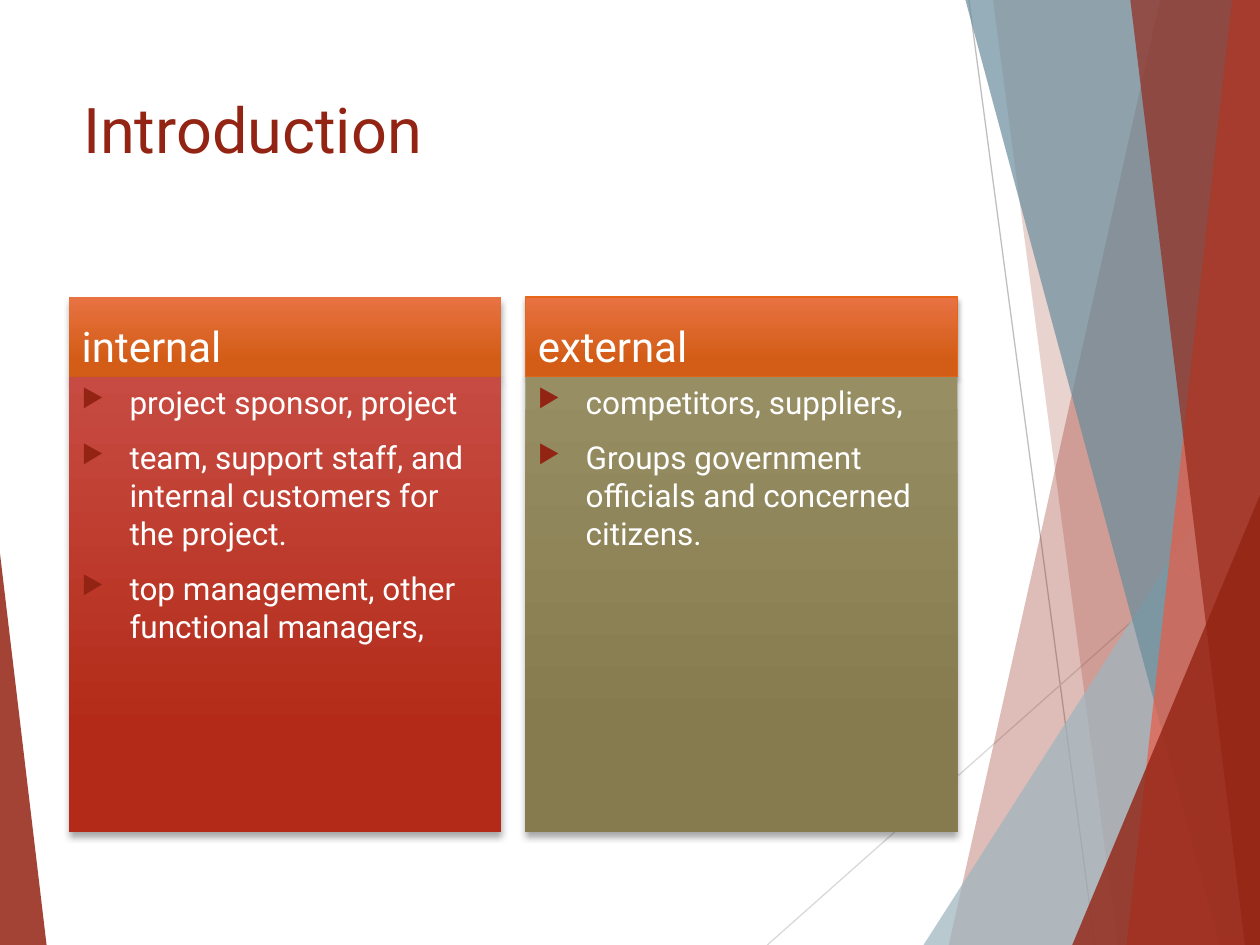
from dataclasses import dataclass

from lxml.etree import SubElement
from pptx import Presentation
from pptx.dml.color import RGBColor
from pptx.enum.shapes import MSO_CONNECTOR, MSO_SHAPE
from pptx.enum.text import MSO_ANCHOR, PP_ALIGN
from pptx.oxml.ns import qn
from pptx.util import Inches, Pt


@dataclass(frozen=True)
class Theme:
    font: str = "Roboto"
    title_size: int = 36
    heading_size: int = 24
    body_size: int = 18
    dark_red: str = "932313"
    coral: str = "E75C48"
    slate: str = "698D9C"
    pale_slate: str = "9EB5BF"
    line_gray: str = "BFBFBF"
    pale_gray: str = "D9D9D9"
    white: str = "FFFFFF"
    shadow: str = "000000"
    heading_outline: str = "E76618"
    heading_gradient: tuple = ("E87242", "D35D16")
    red_gradient: tuple = ("C74B42", "B32B18")
    olive_gradient: tuple = ("988E64", "857B4E")


THEME = Theme()
HEADING_HEIGHT = 0.63


def color(value):
    return RGBColor.from_string(value)


def add_run(paragraph, text, size, text_color):
    run = paragraph.add_run()
    run.text = text
    run.font.name = THEME.font
    run.font.size = Pt(size)
    run.font.color.rgb = color(text_color)


def fill_translucent(shape, fill_color, opacity):
    shape.shadow.inherit = False
    shape.fill.solid()
    shape.fill.fore_color.rgb = color(fill_color)
    shape.line.fill.background()
    color_element = next(shape.fill._xPr.iter(qn("a:srgbClr")))
    SubElement(color_element, qn("a:alpha"), val=str(opacity * 1000))


def add_thin_line(slide, start, end, line_color):
    line = slide.shapes.add_connector(
        MSO_CONNECTOR.STRAIGHT, *(Inches(value) for value in (*start, *end)))
    line.line.color.rgb = color(line_color)
    line.line.width = Pt(0.75)
    SubElement(line._element.spPr, qn("a:effectLst"))


def add_band(slide, box, top_left, bottom_left, fill_color, opacity):
    """Add a band whose left edge slants and whose right edge is the box's."""
    left, top, width, height = box
    right, bottom = left + width, top + height
    corners = [(Inches(x), Inches(y)) for x, y in (
        (top_left, top), (right, top), (right, bottom), (bottom_left, bottom))]
    builder = slide.shapes.build_freeform(*corners[0])
    builder.add_line_segments(corners[1:], close=True)
    fill_translucent(builder.convert_to_shape(), fill_color, opacity)


def add_corner(slide, box, apex, fill_color, opacity):
    triangle = slide.shapes.add_shape(
        MSO_SHAPE.ISOSCELES_TRIANGLE, *(Inches(value) for value in box))
    triangle.adjustments[0] = apex
    fill_translucent(triangle, fill_color, opacity)


def add_decoration(slide, box):
    left, top, width, height = box
    right, bottom = left + width, top + height
    band_box = (left, top - 0.01, width, height + 0.01)

    def right_corner(corner_width, corner_height, fill_color, opacity):
        corner_box = (right - corner_width, bottom - corner_height,
                      corner_width, corner_height)
        add_corner(slide, corner_box, 1, fill_color, opacity)

    add_thin_line(slide, (7.69, top), (8.69, bottom), THEME.line_gray)
    add_thin_line(slide, (right, 4.03), (6.09, bottom), THEME.pale_gray)
    add_band(slide, band_box, 9.21, 7.53, THEME.dark_red, 30)
    add_band(slide, band_box, 7.88, 8.87, THEME.dark_red, 20)
    right_corner(2.67, 4.17, THEME.pale_slate, 72)
    add_band(slide, band_box, 7.66, 9.68, THEME.slate, 70)
    add_band(slide, band_box, 9.78, 8.94, THEME.coral, 70)
    add_band(slide, band_box, 8.97, 9.88, THEME.dark_red, 65)
    right_corner(1.49, 3.57, THEME.dark_red, 80)
    add_corner(slide, (left, bottom - 3.11, 0.37, 3.11), 0, THEME.dark_red, 85)


def place_title(slide, box, text):
    title = slide.shapes.title
    title.left, title.top, title.width, title.height = (
        Inches(value) for value in box)
    title.text_frame.vertical_anchor = MSO_ANCHOR.TOP
    paragraph = title.text_frame.paragraphs[0]
    paragraph.alignment = PP_ALIGN.LEFT
    add_run(paragraph, text, THEME.title_size, THEME.dark_red)


def add_shadow(shape, blur, distance):
    shape.shadow.inherit = False
    effects = shape._element.spPr.find(qn("a:effectLst"))
    shadow = SubElement(
        effects, qn("a:outerShdw"), blurRad=str(Pt(blur)),
        dist=str(Pt(distance)), dir="5400000", rotWithShape="0")
    shadow_color = SubElement(shadow, qn("a:srgbClr"), val=THEME.shadow)
    SubElement(shadow_color, qn("a:alpha"), val="35000")


def add_bullet(paragraph):
    properties = paragraph._p.get_or_add_pPr()
    properties.set("marL", str(Inches(0.38)))
    properties.set("indent", str(Inches(-0.38)))
    bullet_color = SubElement(properties, qn("a:buClr"))
    SubElement(bullet_color, qn("a:srgbClr"), val=THEME.dark_red)
    SubElement(properties, qn("a:buSzPct"), val="80000")
    SubElement(properties, qn("a:buChar"), char="▶")


def add_panel(slide, box, gradient, texts, size, anchor, bulleted=False,
              outline=None):
    panel = slide.shapes.add_shape(
        MSO_SHAPE.RECTANGLE, *(Inches(value) for value in box))
    panel.fill.gradient()
    panel.fill.gradient_angle = 270
    for stop, position, stop_color in zip(
            panel.fill.gradient_stops, (0, 0.78), gradient):
        stop.position = position
        stop.color.rgb = color(stop_color)
    if outline:
        panel.line.color.rgb = color(outline)
        panel.line.width = Pt(1)
        add_shadow(panel, 3, 2)
    else:
        panel.line.fill.background()
        add_shadow(panel, 4, 3)

    frame = panel.text_frame
    frame.word_wrap = True
    frame.vertical_anchor = anchor
    for index, text in enumerate(texts):
        paragraph = frame.add_paragraph() if index else frame.paragraphs[0]
        paragraph.alignment = PP_ALIGN.LEFT
        paragraph.space_before = Pt(10)
        if bulleted:
            add_bullet(paragraph)
        add_run(paragraph, text, size, THEME.white)


def add_column(slide, box, heading, items, gradient, outline=None):
    left, top, width, height = box
    add_panel(slide, (left, top, width, HEADING_HEIGHT),
              THEME.heading_gradient, [heading], THEME.heading_size,
              MSO_ANCHOR.BOTTOM, outline=outline)
    add_panel(slide, (left, top + HEADING_HEIGHT, width, height - HEADING_HEIGHT),
              gradient, items, THEME.body_size, MSO_ANCHOR.TOP, bulleted=True)


def main():
    presentation = Presentation()
    presentation.slide_width = Inches(10)
    presentation.slide_height = Inches(7.5)
    slide = presentation.slides.add_slide(presentation.slide_layouts[5])
    add_decoration(slide, (0, 0, 10, 7.5))
    place_title(slide, (0.56, 0.67, 7.05, 1.44), "Introduction")
    columns = (
        ("internal",
         ["project sponsor, project",
          "team, support staff, and internal customers for the project.",
          "top management, other functional managers,"],
         THEME.red_gradient, None),
        ("external",
         ["competitors, suppliers,",
          "Groups government officials and concerned citizens."],
         THEME.olive_gradient, THEME.heading_outline),
    )
    for index, column in enumerate(columns):
        add_column(slide, (0.55 + index * 3.62, 2.36, 3.43, 4.24), *column)
    presentation.save("out.pptx")


if __name__ == "__main__":
    main()
